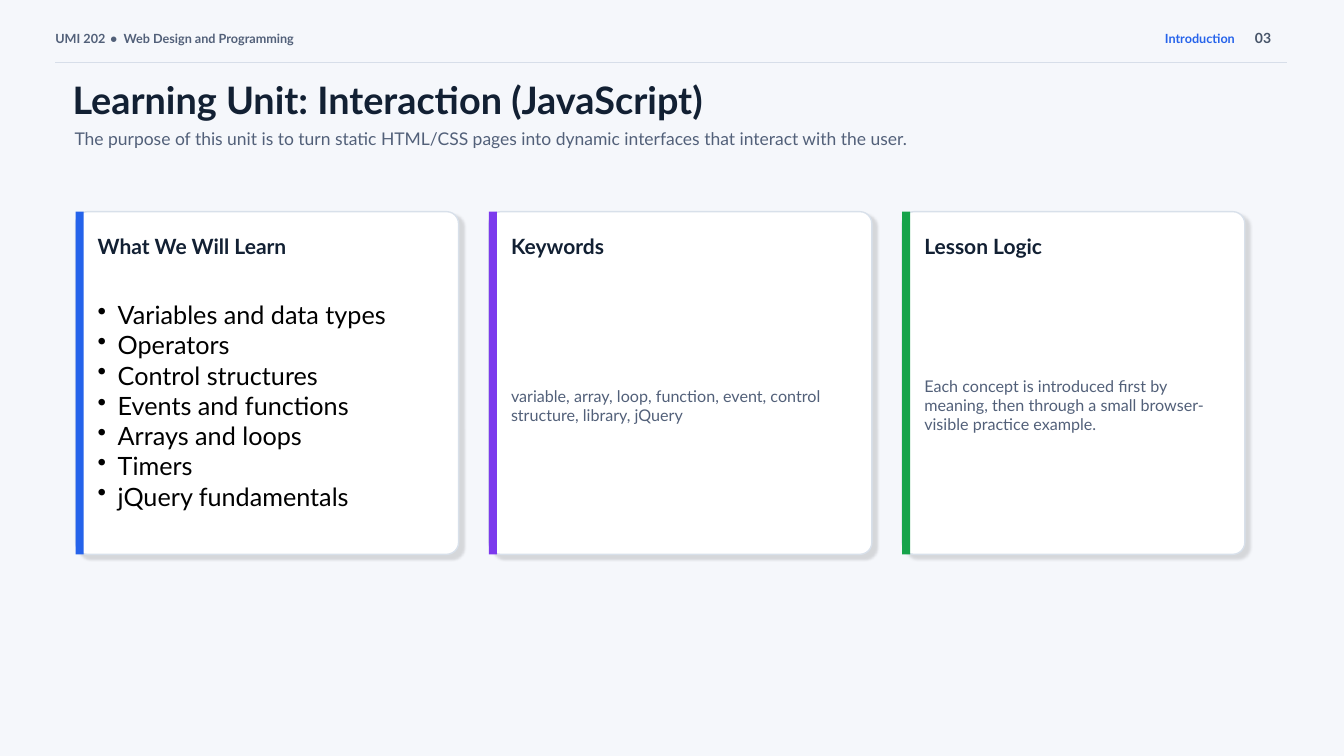
from dataclasses import dataclass

from lxml.etree import SubElement
from pptx import Presentation
from pptx.dml.color import RGBColor
from pptx.enum.shapes import MSO_CONNECTOR, MSO_SHAPE
from pptx.enum.text import MSO_ANCHOR, PP_ALIGN
from pptx.oxml.ns import qn
from pptx.shapes.autoshape import Shape
from pptx.slide import Slide
from pptx.util import Pt

FONT = "Lato"
INK, MUTED, BLUE = "122033", "526079", "2563EB"
CARD_TOP, CARD_HEIGHT, CARD_GAP = 151.2, 244.8, 21.6
ACCENT_WIDTH, TEXT_INSET, TEXT_MARGIN = 5.76, 15.84, 25.92
BULLET_INDENT = 14.3


@dataclass
class Card:
    heading: str
    body: list[str]
    accent: str
    width: float
    size: float = 11.5
    color: str = MUTED
    bulleted: bool = False


CARDS = [
    Card("What We Will Learn",
         ["Variables and data types", "Operators", "Control structures",
          "Events and functions", "Arrays and loops", "Timers",
          "jQuery fundamentals"],
         BLUE, 273.6, size=18, color="000000", bulleted=True),
    Card("Keywords",
         ["variable, array, loop, function, event, control structure, "
          "library, jQuery"],
         "7C3AED", 273.6),
    Card("Lesson Logic",
         ["Each concept is introduced first by meaning, then through a small "
          "browser-visible practice example."],
         "16A34A", 244.8),
]


def rgb(color: str) -> RGBColor:
    return RGBColor.from_string(color)


def add_text(slide: Slide, lines: list[str], left: float, top: float,
             width: float, height: float, *, size: float, color: str,
             bold: bool = False, align: PP_ALIGN = PP_ALIGN.LEFT,
             bulleted: bool = False) -> Shape:
    box = slide.shapes.add_textbox(Pt(left), Pt(top), Pt(width), Pt(height))
    frame = box.text_frame
    frame.word_wrap = True
    frame.vertical_anchor = MSO_ANCHOR.MIDDLE
    frame.margin_left = frame.margin_right = 0
    frame.margin_top = frame.margin_bottom = 0
    frame.text = "\n".join(lines)
    for paragraph in frame.paragraphs:
        paragraph.alignment = align
        if bulleted:
            properties = paragraph._p.get_or_add_pPr()
            properties.set("marL", str(Pt(BULLET_INDENT)))
            properties.set("indent", str(-Pt(BULLET_INDENT)))
            SubElement(properties, qn("a:buChar"), char="•")
        for run in paragraph.runs:
            run.font.name = FONT
            run.font.size = Pt(size)
            run.font.bold = bold
            run.font.color.rgb = rgb(color)
    return box


def add_block(slide: Slide, kind: MSO_SHAPE, left: float, width: float,
              fill: str) -> Shape:
    block = slide.shapes.add_shape(kind, Pt(left), Pt(CARD_TOP), Pt(width),
                                   Pt(CARD_HEIGHT))
    block.shadow.inherit = False
    block.fill.solid()
    block.fill.fore_color.rgb = rgb(fill)
    block.line.fill.background()
    return block


def add_drop_shadow(block: Shape) -> None:
    effects = block._element.spPr.find(qn("a:effectLst"))
    shadow = SubElement(effects, qn("a:outerShdw"), blurRad=str(Pt(2)),
                        dist=str(Pt(4)), dir=str(45 * 60000), algn="tl",
                        rotWithShape="0")
    tint = SubElement(shadow, qn("a:srgbClr"), val="000000")
    SubElement(tint, qn("a:alpha"), val="12000")


def add_card(slide: Slide, card: Card, left: float) -> None:
    panel = add_block(slide, MSO_SHAPE.ROUNDED_RECTANGLE, left, card.width,
                      "FFFFFF")
    panel.adjustments[0] = 0.035
    panel.line.color.rgb = rgb("D8E0EA")
    panel.line.width = Pt(1)
    add_drop_shadow(panel)
    add_block(slide, MSO_SHAPE.RECTANGLE, left, ACCENT_WIDTH, card.accent)

    text_left, text_width = left + TEXT_INSET, card.width - TEXT_MARGIN
    add_text(slide, [card.heading], text_left, CARD_TOP + 12.96, text_width,
             23.04, size=15, color=INK, bold=True)
    add_text(slide, card.body, text_left, CARD_TOP + 41.76, text_width,
             192.96, size=card.size, color=card.color, bulleted=card.bulleted)


def add_header(slide: Slide) -> None:
    course = add_text(slide, ["UMI 202"], 39.6, 18.72, 468, 18, size=9,
                      color=MUTED, bold=True)
    # Letter spacing widens the gaps around the separator dot
    for part, spacing in ((" • ", 116), ("Web Design and Programming", 0)):
        run = course.text_frame.paragraphs[0].add_run()
        run.text = part
        run.font.name = FONT
        run.font.size = Pt(9)
        run.font.bold = True
        run.font.color.rgb = rgb(MUTED)
        run.font._element.set("spc", str(spacing))
    add_text(slide, ["Introduction"], 723.6, 18.72, 158.4, 18, size=9,
             color=BLUE, bold=True, align=PP_ALIGN.RIGHT)
    rule = slide.shapes.add_connector(MSO_CONNECTOR.STRAIGHT, Pt(39.6),
                                      Pt(44.64), Pt(919.44), Pt(44.64))
    rule.line.color.rgb = rgb("D7DEE9")
    rule.line.width = Pt(1)
    SubElement(rule._element.spPr, qn("a:effectLst"))
    add_text(slide, ["03"], 896.4, 18, 23.04, 18, size=10, color="475569",
             bold=True)


def main() -> None:
    deck = Presentation()
    deck.slide_width, deck.slide_height = Pt(960), Pt(540)
    slide = deck.slides.add_slide(deck.slide_layouts[6])
    slide.background.fill.solid()
    slide.background.fill.fore_color.rgb = rgb("F5F7FB")

    # Header and title
    add_header(slide)
    add_text(slide, ["Learning Unit: Interaction (JavaScript)"], 51.84, 59.04,
             532.8, 24.48, size=27, color=INK, bold=True)
    add_text(slide, ["The purpose of this unit is to turn static HTML/CSS "
                     "pages into dynamic interfaces that interact with the "
                     "user."],
             53.28, 92.16, 633.6, 12.96, size=12.5, color=MUTED)

    # Cards from left to right
    card_left = 54.0
    for card in CARDS:
        add_card(slide, card, card_left)
        card_left += card.width + CARD_GAP

    deck.save("out.pptx")


if __name__ == "__main__":
    main()
